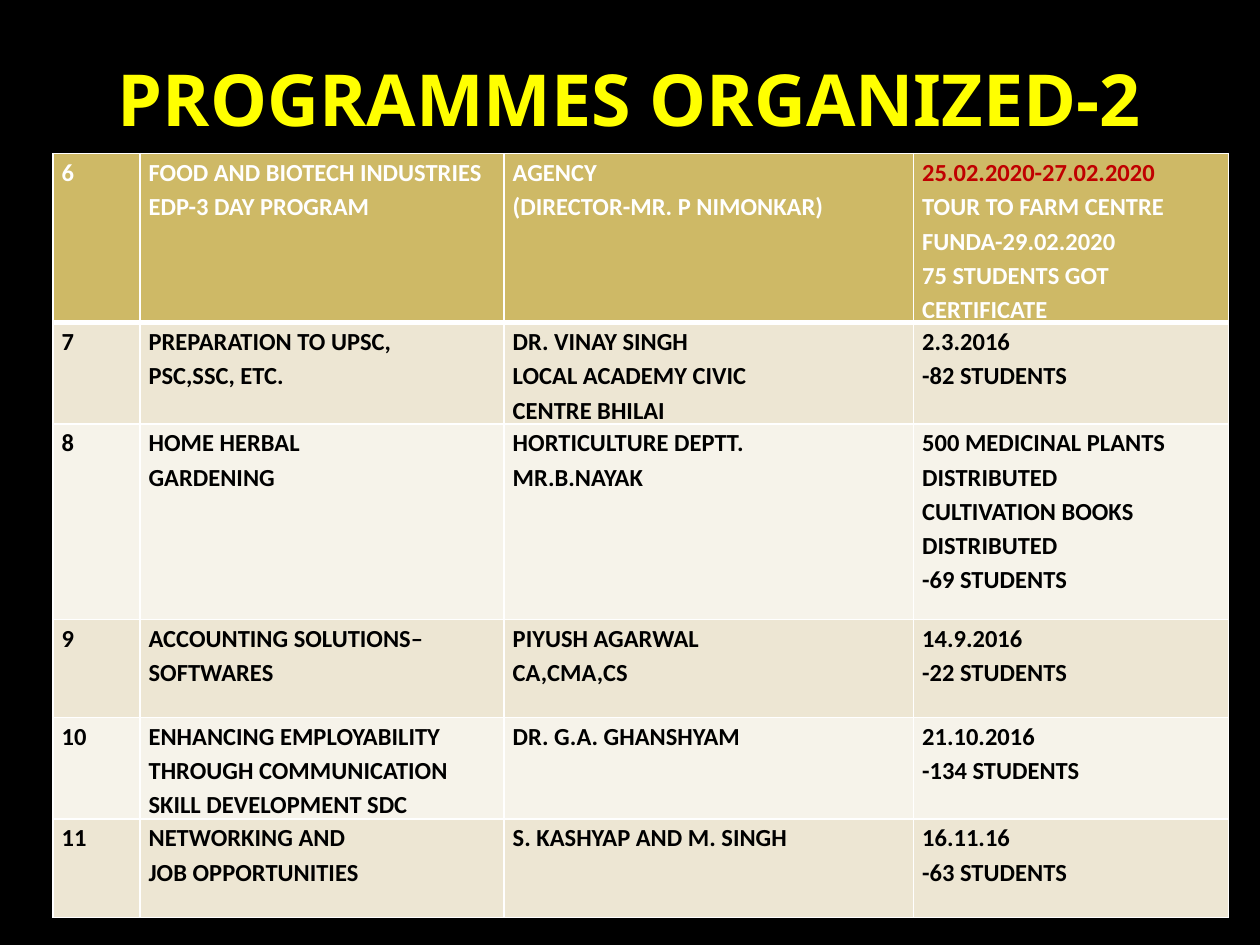
from lxml.etree import SubElement
from pptx import Presentation
from pptx.dml.color import RGBColor
from pptx.enum.text import MSO_ANCHOR, PP_ALIGN
from pptx.oxml.ns import qn
from pptx.util import Inches, Pt

TITLE = "PROGRAMMES ORGANIZED-2"
COLUMN_WIDTHS = [0.69, 2.89, 3.25, 2.5]
ROW_HEIGHTS = [1.29, 0.78, 1.55, 0.78, 0.78, 0.78]
HEADER_FILL = "CEB966"
BAND_FILLS = ["F6F3EA", "EDE6D3"]
WHITE, BLACK, RED, YELLOW = "FFFFFF", "000000", "C00000", "FFFF00"

PROGRAMMES = [
    [["6"],
     ["FOOD AND BIOTECH INDUSTRIES", "EDP-3 DAY PROGRAM"],
     ["AGENCY", "(DIRECTOR-MR. P NIMONKAR)"],
     ["25.02.2020-27.02.2020", "TOUR TO FARM CENTRE", "FUNDA-29.02.2020",
      "75 STUDENTS GOT", "CERTIFICATE"]],
    [["7"],
     ["PREPARATION TO UPSC,", "PSC,SSC, ETC."],
     ["DR. VINAY SINGH", "LOCAL ACADEMY CIVIC", "CENTRE BHILAI"],
     ["2.3.2016", "-82 STUDENTS"]],
    [["8"],
     ["HOME HERBAL", "GARDENING"],
     ["HORTICULTURE DEPTT.", "MR.B.NAYAK"],
     ["500 MEDICINAL PLANTS", "DISTRIBUTED", "CULTIVATION BOOKS",
      "DISTRIBUTED", "-69 STUDENTS"]],
    [["9"],
     ["ACCOUNTING SOLUTIONS–", "SOFTWARES"],
     ["PIYUSH AGARWAL", "CA,CMA,CS"],
     ["14.9.2016", "-22 STUDENTS"]],
    [["10"],
     ["ENHANCING EMPLOYABILITY", "THROUGH COMMUNICATION", "SKILL DEVELOPMENT SDC"],
     ["DR. G.A. GHANSHYAM"],
     ["21.10.2016", "-134 STUDENTS"]],
    [["11"],
     ["NETWORKING AND", "JOB OPPORTUNITIES"],
     ["S. KASHYAP AND M. SINGH"],
     ["16.11.16", "-63 STUDENTS"]],
]


def color(value):
    return RGBColor.from_string(value)


def set_font(font, name, size, value):
    font.name = name
    font.size = Pt(size)
    font.bold = True
    font.color.rgb = color(value)


def add_title(page, left, top, width, height):
    box = page.shapes.add_textbox(Inches(left), Inches(top), Inches(width), Inches(height))
    frame = box.text_frame
    frame.word_wrap = True
    frame.vertical_anchor = MSO_ANCHOR.MIDDLE
    para = frame.paragraphs[0]
    para.text = TITLE
    para.alignment = PP_ALIGN.CENTER
    set_font(para.font, "Noto Sans", 41, YELLOW)


def set_borders(cell, top, bottom):
    properties = cell._tc.get_or_add_tcPr()
    for side, width in (("L", 1), ("R", 1), ("T", top), ("B", bottom)):
        line = SubElement(properties, qn(f"a:ln{side}"), w=str(Pt(width)))
        fill = SubElement(line, qn("a:solidFill"))
        SubElement(fill, qn("a:srgbClr"), val=WHITE)


def fill_cell(cell, lines, row):
    set_borders(cell, top=3 if row == 1 else 1, bottom=3 if row == 0 else 1)
    cell.fill.solid()
    cell.fill.fore_color.rgb = color(BAND_FILLS[row % 2] if row else HEADER_FILL)
    cell.margin_left = cell.margin_right = Inches(0.07)
    cell.margin_top = cell.margin_bottom = 0
    cell.text = "\n".join(lines)
    for para in cell.text_frame.paragraphs:
        para.line_spacing = 1.15
        set_font(para.font, "Calibri", 14, BLACK if row else WHITE)


def add_programmes(page, left, top, width, height):
    table = page.shapes.add_table(
        len(ROW_HEIGHTS), len(COLUMN_WIDTHS),
        Inches(left), Inches(top), Inches(width), Inches(height)).table
    for column, column_width in zip(table.columns, COLUMN_WIDTHS):
        column.width = Inches(column_width)
    for row, row_height in zip(table.rows, ROW_HEIGHTS):
        row.height = Inches(row_height)
    for row, programme in enumerate(PROGRAMMES):
        for column, lines in enumerate(programme):
            fill_cell(table.cell(row, column), lines, row)
    dates = table.cell(0, 3).text_frame.paragraphs[0]
    dates.font.color.rgb = color(RED)


def main():
    deck = Presentation()
    deck.slide_width, deck.slide_height = Inches(10), Inches(7.5)
    page = deck.slides.add_slide(deck.slide_layouts[6])
    page.background.fill.solid()
    page.background.fill.fore_color.rgb = color(BLACK)
    add_title(page, 0.5, 0.3, 9, 0.95)
    add_programmes(page, 0.42, 1.22, sum(COLUMN_WIDTHS), sum(ROW_HEIGHTS))
    deck.save("out.pptx")


if __name__ == "__main__":
    main()
